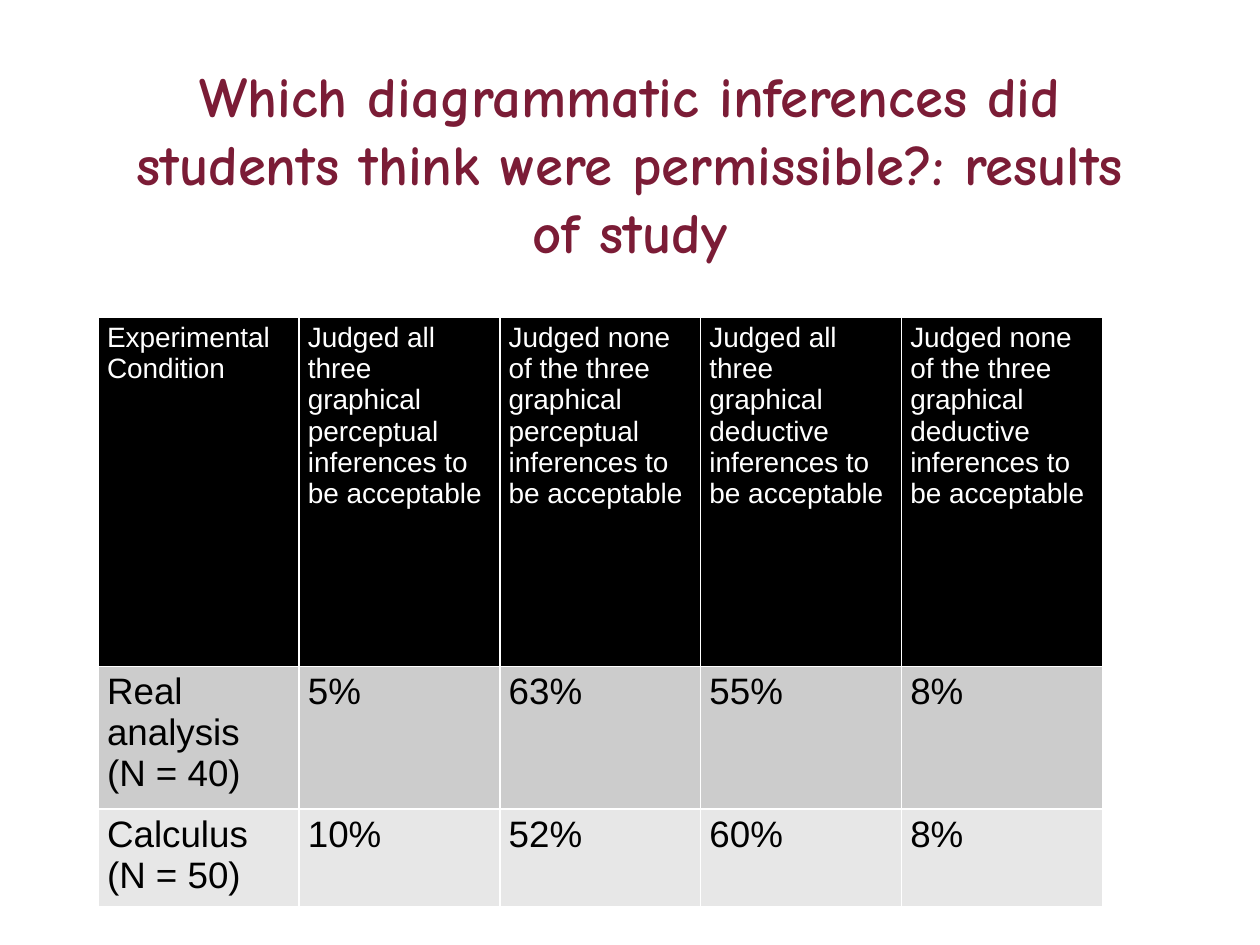
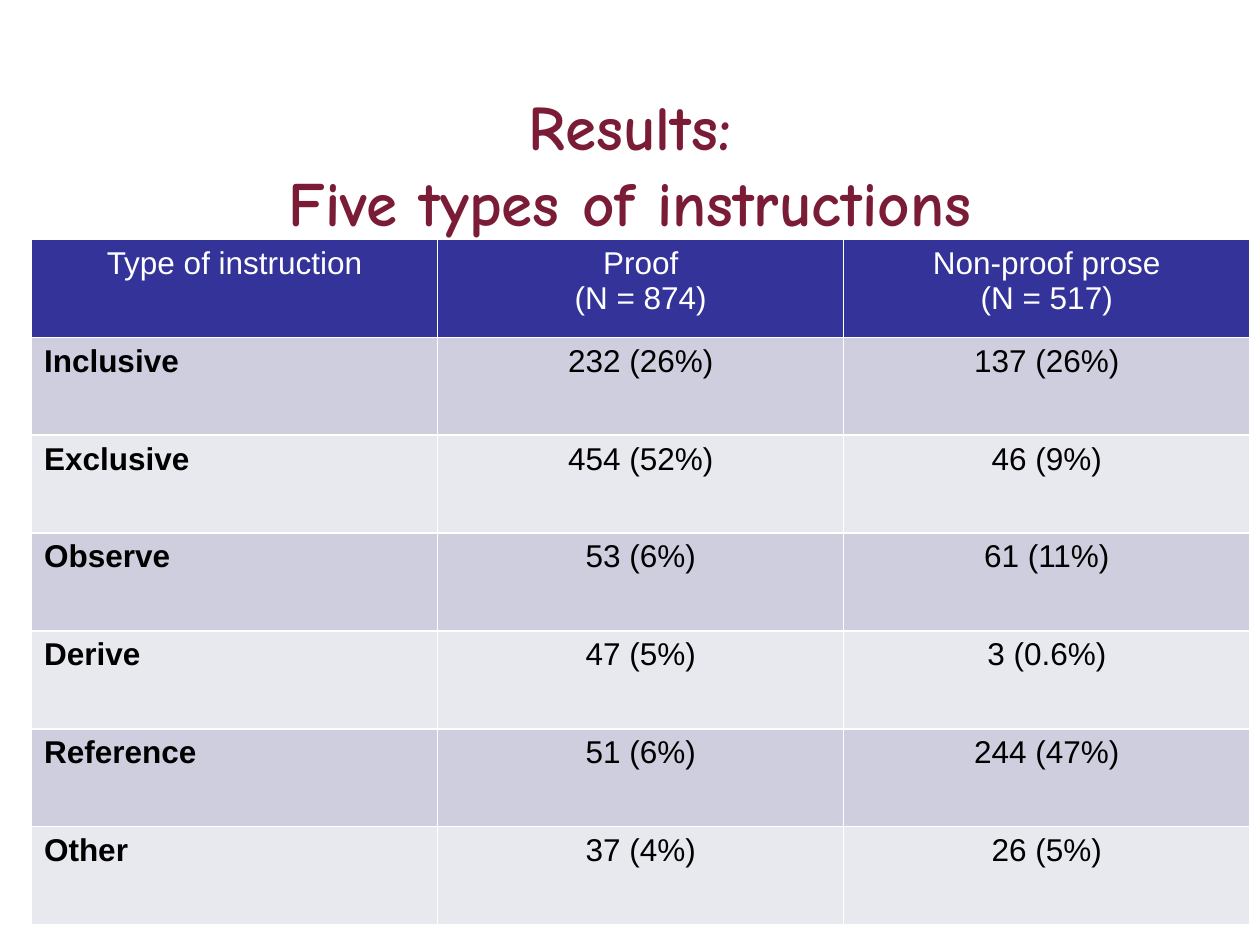
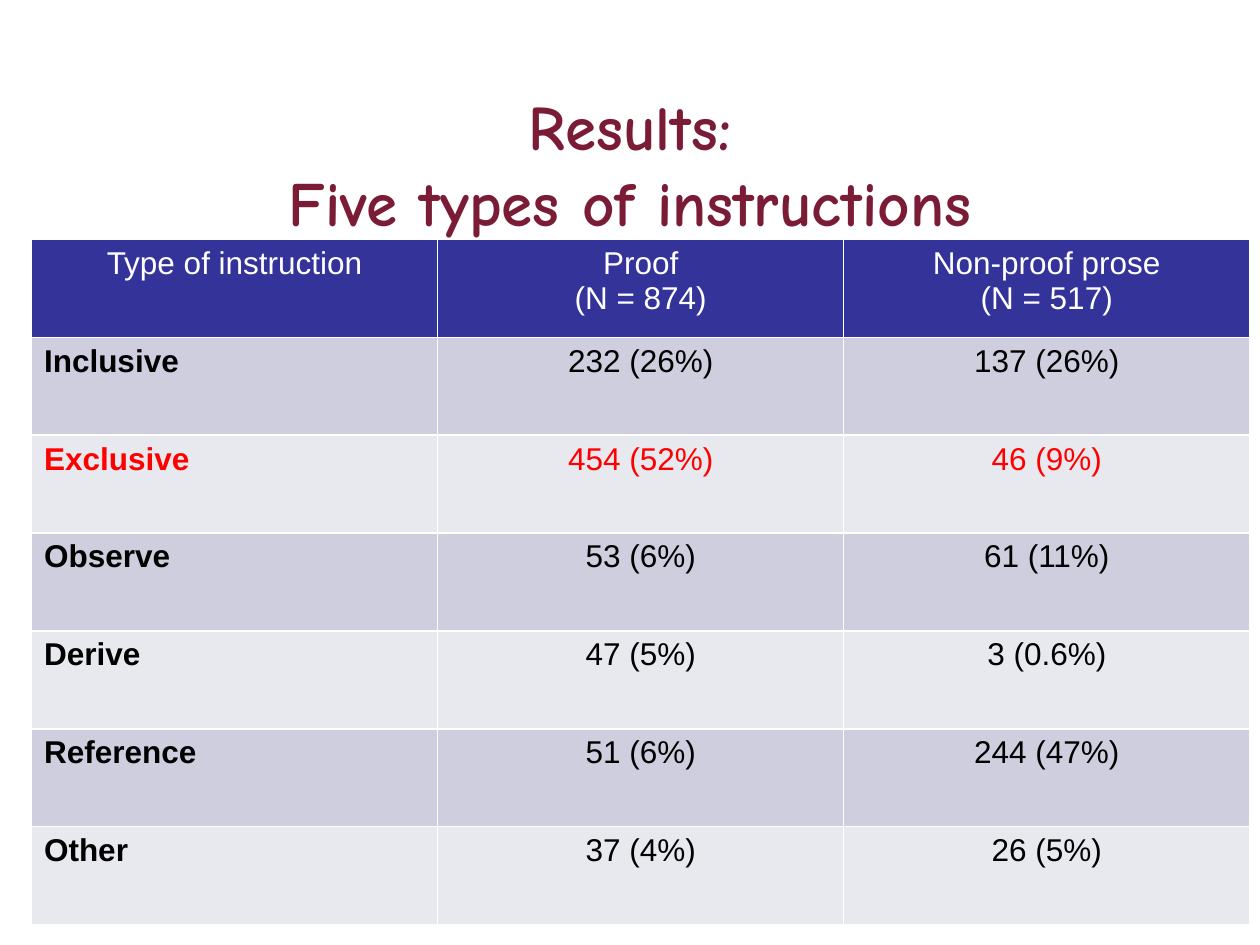
"""Build three slides of study results, each a title above a table."""
import dataclasses

import pptx
import pptx.dml.color
import pptx.enum.text
import pptx.util

Inches = pptx.util.Inches
ALIGN = pptx.enum.text.PP_ALIGN


@dataclasses.dataclass(frozen=True)
class Theme:
    title_font: str = "Comic Neue"
    body_font: str = "Arial"
    title: str = "7B1C36"
    header_text: str = "FFFFFF"
    body_text: str = "000000"
    highlight: str = "FF0000"
    study_fills: tuple = ("000000", "CCCCCC", "E7E7E7")
    instruction_fills: tuple = ("333399", "CECEDE", "E8E8EF")
    long_title_size: float = 32.4
    title_size: float = 36
    study_header_size: float = 16
    study_size: float = 21
    instruction_size: float = 18


theme = Theme()


def write(frame, text, *, size, color, font=theme.body_font, bold=False,
          align=ALIGN.LEFT, soft_breaks=False):
    paragraphs = [text] if soft_breaks else text.split("\n")
    for index, words in enumerate(paragraphs):
        paragraph = frame.add_paragraph() if index else frame.paragraphs[0]
        paragraph.text = words
        paragraph.alignment = align
        for run in paragraph.runs:
            run.font.name = font
            run.font.size = pptx.util.Pt(size)
            run.font.bold = bold
            run.font.color.rgb = pptx.dml.color.RGBColor.from_string(color)


study_rows = [
    ["Experimental Condition"] + [
        f"Judged {amount} three graphical {kind} inferences to be acceptable"
        for kind in ("perceptual", "deductive") for amount in ("all", "none of the")],
    ["Real analysis\n(N = 40)", "5%", "63%", "55%", "8%"],
    ["Calculus\n(N = 50)", "10%", "52%", "60%", "8%"],
]
instruction_rows = [
    ["Type of instruction", "Proof\n(N = 874)", "Non-proof prose\n(N = 517)"],
    ["Inclusive", "232 (26%)", "137 (26%)"],
    ["Exclusive", "454 (52%)", "46 (9%)"],
    ["Observe", "53 (6%)", "61 (11%)"],
    ["Derive", "47 (5%)", "3 (0.6%)"],
    ["Reference", "51 (6%)", "244 (47%)"],
    ["Other", "37 (4%)", "26 (5%)"],
]

study = dict(
    title="Which diagrammatic inferences did students think were permissible?: results of study",
    title_size=theme.long_title_size, rows=study_rows, box=(0.78, 2.52, 7.97, 4.67),
    row_heights=[2.77, 0.87, 0.75], insets=(0.07, 0.04), fills=theme.study_fills,
    header_size=theme.study_header_size, body_size=theme.study_size,
    centred=False, highlighted=None)
instructions = dict(
    title="Results:\nFive types of instructions",
    title_size=theme.title_size, rows=instruction_rows, box=(0.25, 1.9, 9.67, 5.44),
    row_heights=[5.44 / len(instruction_rows)] * len(instruction_rows),
    insets=(0.1, 0.05), fills=theme.instruction_fills,
    header_size=theme.instruction_size, body_size=theme.instruction_size,
    centred=True, highlighted=None)
exclusive_instructions = {**instructions, "highlighted": "Exclusive"}

deck = pptx.Presentation()
deck.slide_width, deck.slide_height = Inches(10), Inches(7.5)

for content in (study, instructions, exclusive_instructions):
    slide = deck.slides.add_slide(deck.slide_layouts[6])

    heading = slide.shapes.add_textbox(
        Inches(0.75), Inches(0.67), Inches(8.5), Inches(1.25)).text_frame
    heading.word_wrap = True
    heading.vertical_anchor = pptx.enum.text.MSO_ANCHOR.MIDDLE
    write(heading, content["title"], size=content["title_size"], color=theme.title,
          font=theme.title_font, bold=True, align=ALIGN.CENTER, soft_breaks=True)

    rows = content["rows"]
    left, top, width, height = map(Inches, content["box"])
    results_frame = slide.shapes.add_table(len(rows), len(rows[0]), left, top, width, height)
    results = results_frame.table
    for row, row_height in zip(results.rows, content["row_heights"]):
        row.height = Inches(row_height)
    results_frame.height = height

    header_fill, *band_fills = content["fills"]
    side_inset, end_inset = map(Inches, content["insets"])
    for row_index, values in enumerate(rows):
        is_header = row_index == 0
        fill = header_fill if is_header else band_fills[(row_index - 1) % 2]
        if is_header:
            color = theme.header_text
        elif values[0] == content["highlighted"]:
            color = theme.highlight
        else:
            color = theme.body_text
        for column_index, value in enumerate(values):
            is_label = column_index == 0 and not is_header
            cell = results.cell(row_index, column_index)
            cell.margin_left = cell.margin_right = side_inset
            cell.margin_top = cell.margin_bottom = end_inset
            cell.fill.solid()
            cell.fill.fore_color.rgb = pptx.dml.color.RGBColor.from_string(fill)
            write(cell.text_frame, value, color=color,
                  size=content["header_size" if is_header else "body_size"],
                  bold=content["centred"] and is_label,
                  align=ALIGN.CENTER if content["centred"] and not is_label else ALIGN.LEFT)

deck.save("out.pptx")
